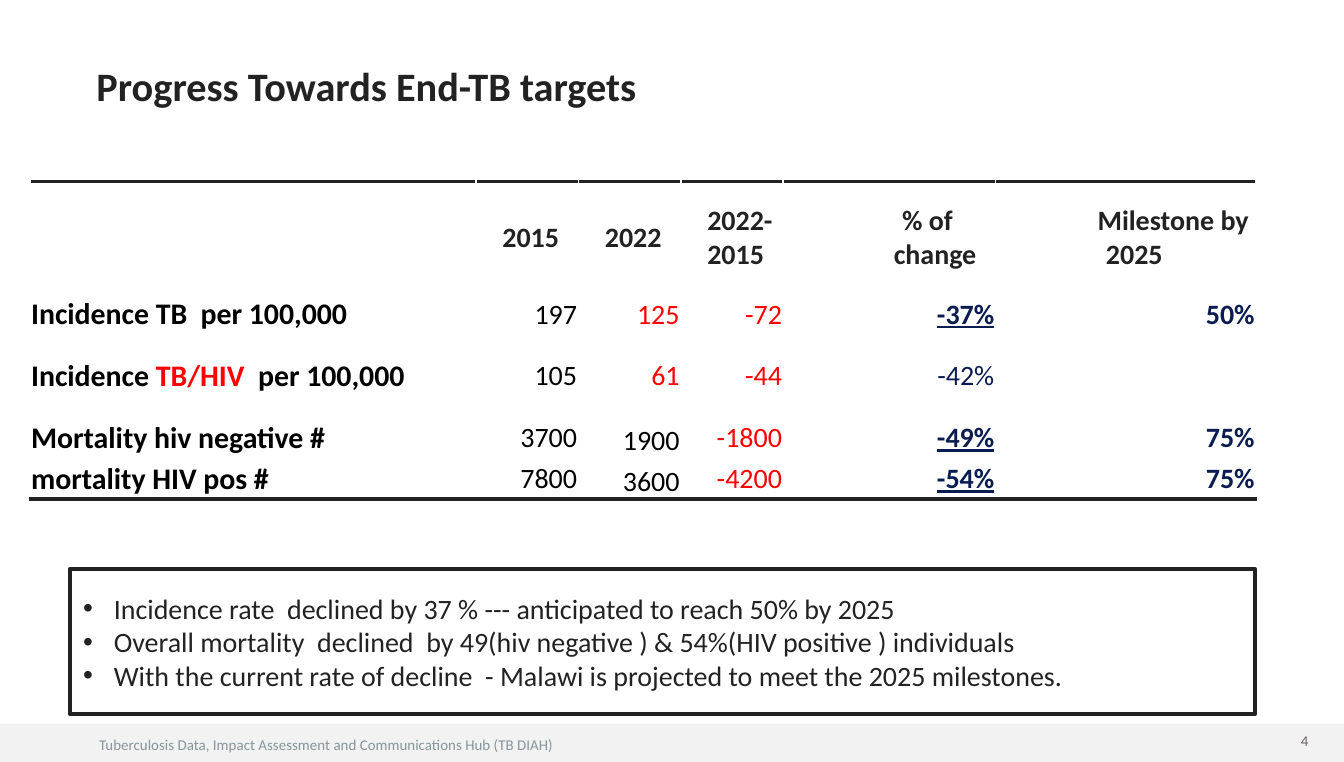
from lxml import etree
from pptx import Presentation
from pptx.dml.color import RGBColor
from pptx.enum import shapes, text
from pptx.oxml.ns import qn
from pptx.util import Pt

INK, BLACK, RED, NAVY = "222222", "000000", "FF0000", "0A1C50"
WHITE, BAND, FOOTER, NUMBER = "FFFFFF", "F2F2F2", "879499", "6C6463"
LEFT, RIGHT = text.PP_ALIGN.LEFT, text.PP_ALIGN.RIGHT
TOP, MIDDLE, BOTTOM = text.MSO_ANCHOR.TOP, text.MSO_ANCHOR.MIDDLE, text.MSO_ANCHOR.BOTTOM

HEADERS = [
    ("2015", 0, 13.5),
    ("2022", 0, 13.5),
    ("2022-2015", 13.5, 0),
    ("% of change", 58.5, 4.5),
    ("Milestone by 2025", 58.5, -4.5),
]
ROWS = [
    ([("Incidence TB  per 100,000", BLACK)], "197", "125", "-72", "-37%", "50%"),
    ([("Incidence ", BLACK), ("TB/HIV", RED), ("  per 100,000", BLACK)],
     "105", "61", "-44", "-42%", ""),
    ([("Mortality hiv negative #", BLACK)], "3700", "1900", "-1800", "-49%", "75%"),
    ([("mortality HIV pos #", BLACK)], "7800", "3600", "-4200", "-54%", "75%"),
]
FINDINGS = [
    "Incidence rate  declined by 37 % --- anticipated to reach 50% by 2025",
    "Overall mortality  declined  by 49(hiv negative ) & 54%(HIV positive ) individuals",
    "With the current rate of decline  - Malawi is projected to meet the 2025 milestones.",
]


def color(value):
    return RGBColor.from_string(value)


def add_run(paragraph, words, size, fill, bold=False, underline=False):
    run = paragraph.add_run()
    run.text = words
    font = run.font
    font.name, font.size, font.bold, font.underline = "Calibri", Pt(size), bold, underline
    font.color.rgb = color(fill)


def set_indent(paragraph, margin, first):
    properties = paragraph._p.get_or_add_pPr()
    properties.set("marL", str(Pt(margin)))
    properties.set("indent", str(Pt(first)))
    return properties


def add_rectangle(slide, box, fill):
    shape = slide.shapes.add_shape(shapes.MSO_SHAPE.RECTANGLE, *map(Pt, box))
    shape.shadow.inherit = False
    shape.fill.solid()
    shape.fill.fore_color.rgb = color(fill)
    shape.line.fill.background()
    return shape


def add_label(slide, box, words, size, fill, bold=False, align=LEFT, anchor=TOP):
    frame = slide.shapes.add_textbox(*map(Pt, box)).text_frame
    frame.word_wrap = True
    frame.vertical_anchor = anchor
    paragraph = frame.paragraphs[0]
    paragraph.alignment = align
    add_run(paragraph, words, size, fill, bold)


def add_footer(slide, box):
    left, top, width, height = box
    add_rectangle(slide, box, BAND)
    add_label(slide, (left + 46, top + 2.9, 360, 17),
              "Tuberculosis Data, Impact Assessment and Communications Hub (TB DIAH)", 8, FOOTER)
    add_label(slide, (left + width - 180, top + 0.7, 168, 17), "4", 8, NUMBER,
              align=RIGHT, anchor=MIDDLE)


def add_border(cell, side):
    line = etree.Element(qn(f"a:{side}"), w=str(Pt(2)))
    fill = etree.SubElement(line, qn("a:solidFill"))
    etree.SubElement(fill, qn("a:srgbClr"), val=INK)
    cell._tc.get_or_add_tcPr().insert(0, line)


def format_cell(cell):
    cell.fill.solid()
    cell.fill.fore_color.rgb = color(WHITE)
    cell.vertical_anchor = MIDDLE
    cell.margin_left = cell.margin_right = cell.margin_top = Pt(0.7)
    cell.margin_bottom = 0


def add_targets_table(slide, box):
    widths = [239, 54.9, 54.9, 54.9, 113.7, 139.5]
    heights = [60, 22, 44, 22, 22]
    table = slide.shapes.add_table(len(heights), len(widths), *map(Pt, box)).table
    table.first_row = table.horz_banding = False
    for column, width in zip(table.columns, widths):
        column.width = Pt(width)
    for row, height in zip(table.rows, heights):
        row.height = Pt(height)
    for cell in table.iter_cells():
        format_cell(cell)

    for index, (words, margin, first) in enumerate(HEADERS, 1):
        paragraph = table.cell(0, index).text_frame.paragraphs[0]
        set_indent(paragraph, margin, first)
        add_run(paragraph, words, 15, INK, True)

    for row, (label, *values) in enumerate(ROWS, 1):
        paragraph = table.cell(row, 0).text_frame.paragraphs[0]
        for words, fill in label:
            add_run(paragraph, words, 16, fill, True)
        met = bool(values[-1])
        fills = [BLACK, RED if row < 3 else BLACK, RED, NAVY, NAVY]
        for column, (value, fill) in enumerate(zip(values, fills), 1):
            if value:
                paragraph = table.cell(row, column).text_frame.paragraphs[0]
                paragraph.alignment = RIGHT
                add_run(paragraph, value, 15, fill, met and column > 3, met and column == 4)
        if row > 2:
            table.cell(row, 2).vertical_anchor = BOTTOM

    for column in range(len(widths)):
        add_border(table.cell(0, column), "lnT")
        add_border(table.cell(len(ROWS), column), "lnB")


def add_findings(slide, box):
    shape = add_rectangle(slide, box, WHITE)
    shape.line.color.rgb = color(INK)
    shape.line.width = Pt(2)
    frame = shape.text_frame
    frame.word_wrap = True
    frame.vertical_anchor = MIDDLE
    for index, words in enumerate(FINDINGS):
        paragraph = frame.add_paragraph() if index else frame.paragraphs[0]
        paragraph.alignment = LEFT
        properties = set_indent(paragraph, 16.5, -16.5)
        etree.SubElement(properties, qn("a:buFont"), typeface="Arial")
        etree.SubElement(properties, qn("a:buChar"), char="•")
        add_run(paragraph, words, 15, INK)


def main():
    presentation = Presentation()
    presentation.slide_width, presentation.slide_height = Pt(720), Pt(408)
    slide = presentation.slides.add_slide(presentation.slide_layouts[6])
    add_footer(slide, (0, 387.4, 720, 20.6))
    add_label(slide, (44.6, 26, 644, 36), "Progress Towards End-TB targets", 21.6, INK, True,
              anchor=BOTTOM)
    add_findings(slide, (37.4, 304.6, 635, 77.8))
    add_targets_table(slide, (16, 97.2, 656.9, 170))
    presentation.save("out.pptx")


if __name__ == "__main__":
    main()
